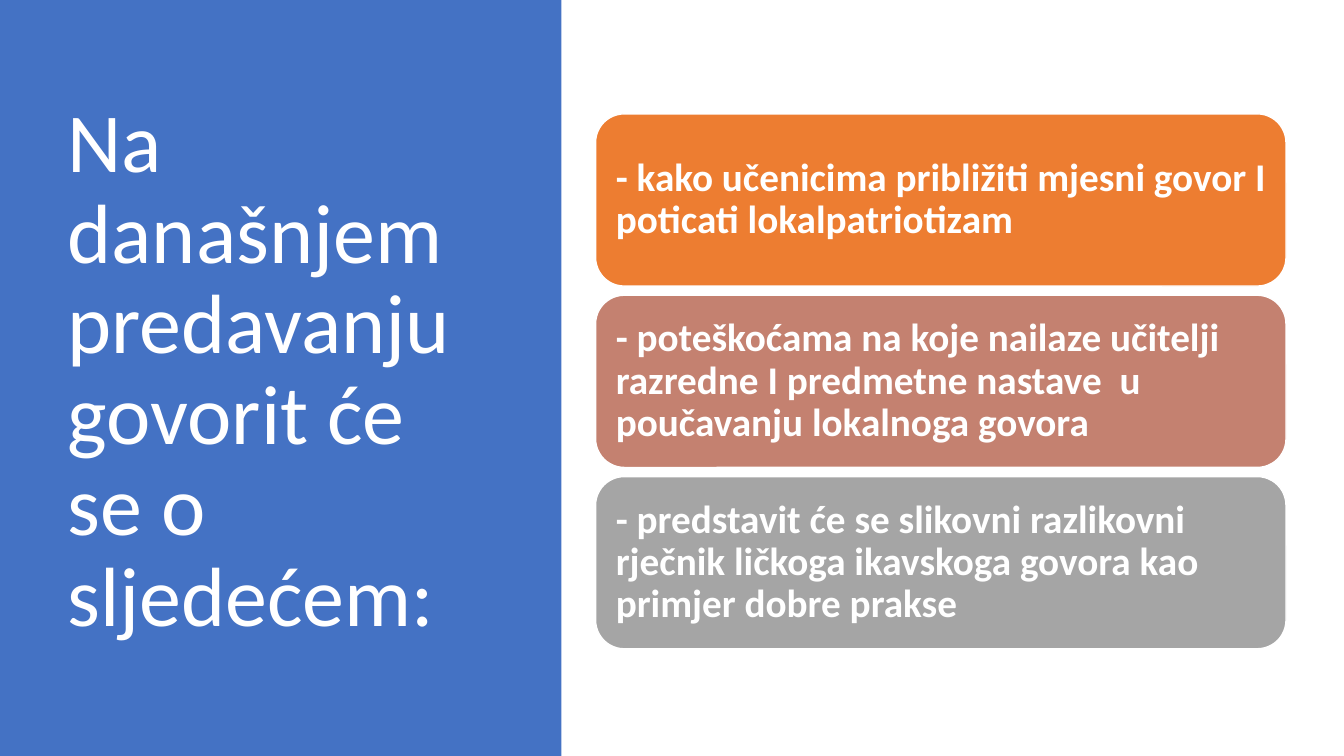
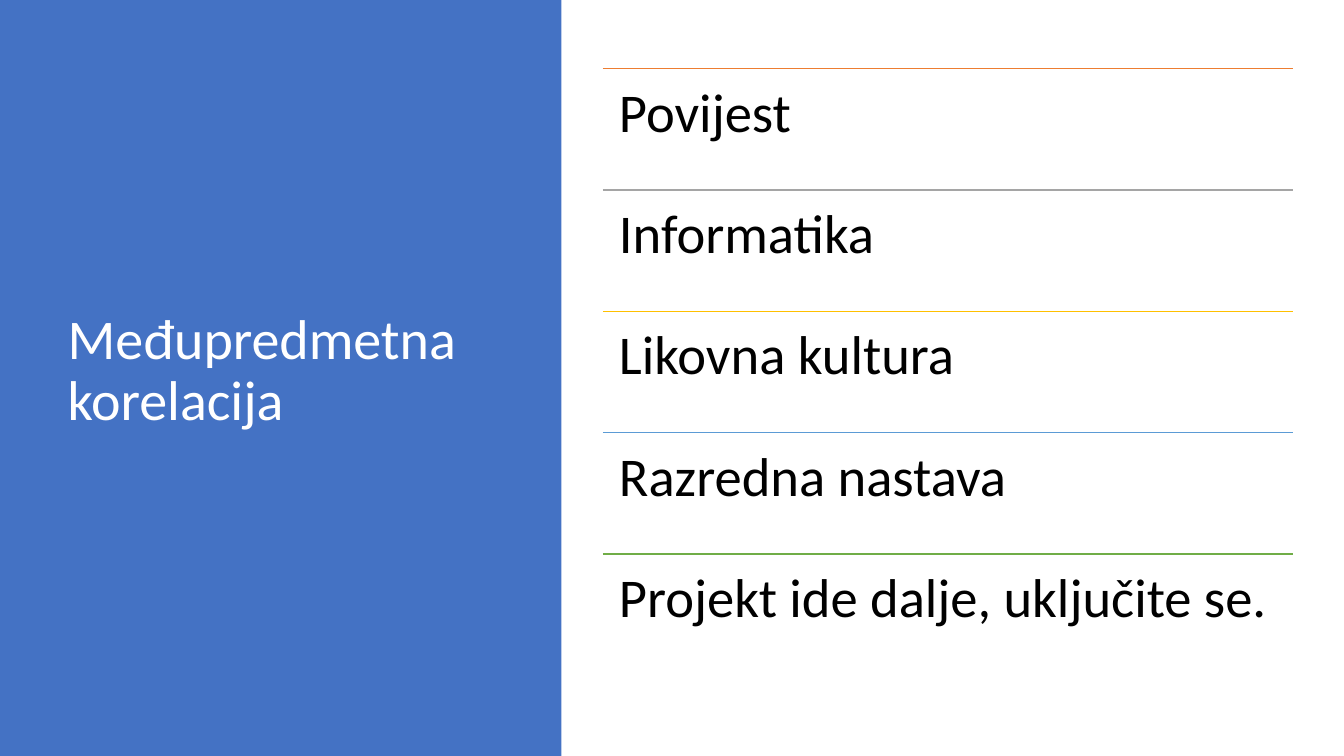
from lxml import etree
from pptx import Presentation
from pptx import util as u
from pptx.dml import color
from pptx.enum import shapes, text
from pptx.oxml import ns

FONT = "Calibri"
COLORS = {
    "blue": "4472C4", "orange": "ED7D31", "clay": "C48170", "gray": "A5A5A5",
    "gold": "FFC000", "sky": "5B9BD5", "green": "70AD47",
    "white": "FFFFFF", "black": "000000",
}

TOPICS_TITLE = "Na današnjem predavanju govorit će se o sljedećem:"
TOPICS = [
    ("- kako učenicima približiti mjesni govor I poticati lokalpatriotizam", "orange"),
    ("- poteškoćama na koje nailaze učitelji razredne I predmetne nastave  u poučavanju lokalnoga govora", "clay"),
    ("- predstavit će se slikovni razlikovni rječnik ličkoga ikavskoga govora kao primjer dobre prakse", "gray"),
]

SUBJECTS_TITLE = "Međupredmetna korelacija"
SUBJECTS = [
    ("Povijest", "orange"),
    ("Informatika", "gray"),
    ("Likovna kultura", "gold"),
    ("Razredna nastava", "sky"),
    ("Projekt ide dalje, uključite se.", "green"),
]

SLIDE_WIDTH, SLIDE_HEIGHT = u.Cm(33.87), u.Cm(19.05)
PANEL_WIDTH = u.Cm(14.15)
TITLE_LEFT, TITLE_WIDTH = u.Cm(1.45), u.Cm(10.57)
CONTENT_TOP, CONTENT_HEIGHT = u.Cm(1.73), u.Cm(15.29)
ITEM_WIDTH = u.Cm(17.4)
CARD_LEFT, CARD_TOP = u.Cm(15.01), u.Cm(2.87)
CARD_HEIGHT, CARD_GAP = u.Cm(4.34), u.Cm(0.23)
ROW_LEFT = u.Cm(15.19)


def rgb(name):
    return color.RGBColor.from_string(COLORS[name])


def write(shape, words, size, color_name, anchor, bold=False, inset=None):
    frame = shape.text_frame
    frame.word_wrap = True
    frame.auto_size = text.MSO_AUTO_SIZE.NONE
    frame.vertical_anchor = anchor
    if inset is not None:
        frame.margin_left = frame.margin_right = inset
        frame.margin_top = frame.margin_bottom = inset
    paragraph = frame.paragraphs[0]
    paragraph.alignment = text.PP_ALIGN.LEFT
    paragraph.line_spacing = 0.9
    run = paragraph.add_run()
    run.text = words
    run.font.name = FONT
    run.font.size = u.Pt(size)
    run.font.bold = bold
    run.font.color.rgb = rgb(color_name)


def add_box(slide, kind, left, top, width, height, fill):
    shape = slide.shapes.add_shape(kind, left, top, width, height)
    shape.shadow.inherit = False
    shape.fill.solid()
    shape.fill.fore_color.rgb = rgb(fill)
    return shape


def add_panel_slide(presentation, layout, title, size):
    slide = presentation.slides.add_slide(layout)
    panel = add_box(slide, shapes.MSO_SHAPE.RECTANGLE, 0, 0, PANEL_WIDTH, SLIDE_HEIGHT, "blue")
    panel.line.fill.background()
    slide.shapes.title._element.addprevious(panel._element)
    write(slide.shapes.title, title, size, "white", text.MSO_ANCHOR.MIDDLE)
    return slide


def add_cards(slide, topics):
    for index, (words, fill) in enumerate(topics):
        top = CARD_TOP + index * (CARD_HEIGHT + CARD_GAP)
        card = add_box(slide, shapes.MSO_SHAPE.ROUNDED_RECTANGLE,
                       CARD_LEFT, top, ITEM_WIDTH, CARD_HEIGHT, fill)
        card.line.color.rgb = rgb("white")
        card.line.width = u.Pt(1)
        write(card, words, 28, "white", text.MSO_ANCHOR.MIDDLE, bold=True, inset=u.Cm(0.3))


def add_ruled_rows(slide, subjects):
    height = CONTENT_HEIGHT // len(subjects)
    for index, (words, line_color) in enumerate(subjects):
        top = CONTENT_TOP + index * height
        rule = slide.shapes.add_connector(shapes.MSO_CONNECTOR.STRAIGHT,
                                          ROW_LEFT, top, ROW_LEFT + ITEM_WIDTH, top)
        rule.line.color.rgb = rgb(line_color)
        rule.line.width = u.Pt(1)
        etree.SubElement(rule._element.spPr, ns.qn("a:effectLst"))
        row = slide.shapes.add_textbox(ROW_LEFT, top, ITEM_WIDTH, height)
        write(row, words, 39, "black", text.MSO_ANCHOR.TOP, inset=u.Cm(0.41))


def main():
    presentation = Presentation()
    presentation.slide_width, presentation.slide_height = SLIDE_WIDTH, SLIDE_HEIGHT
    layout = presentation.slide_layouts.get_by_name("Title Only")
    title = layout.placeholders[0]
    title.left, title.top = TITLE_LEFT, CONTENT_TOP
    title.width, title.height = TITLE_WIDTH, CONTENT_HEIGHT

    add_cards(add_panel_slide(presentation, layout, TOPICS_TITLE, 60), TOPICS)
    add_ruled_rows(add_panel_slide(presentation, layout, SUBJECTS_TITLE, 40), SUBJECTS)
    presentation.save("out.pptx")


if __name__ == "__main__":
    main()
